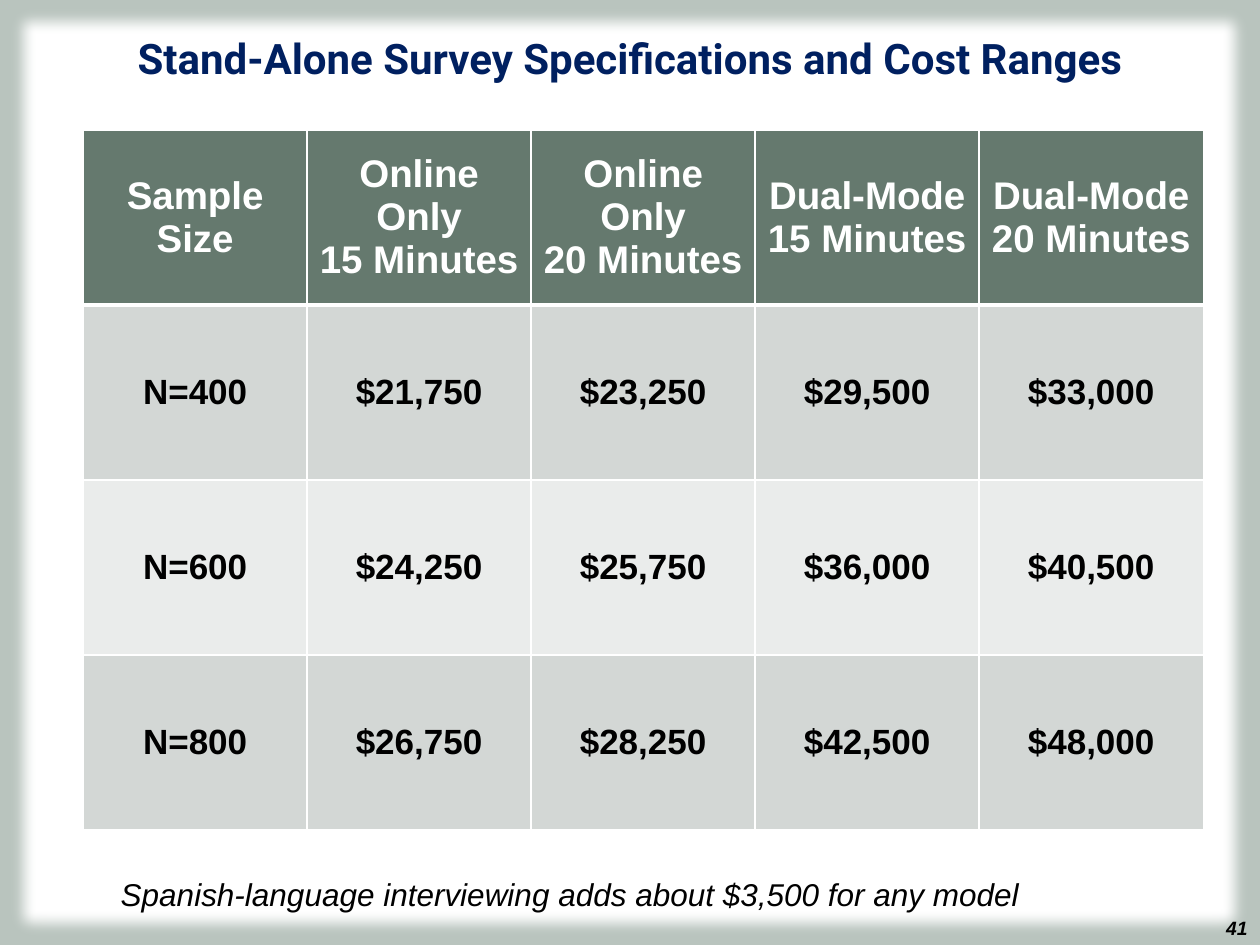
from dataclasses import dataclass

from lxml import etree
from pptx import Presentation
from pptx.dml.color import RGBColor
from pptx.enum.shapes import MSO_SHAPE
from pptx.enum.text import MSO_ANCHOR, PP_ALIGN
from pptx.oxml.ns import qn
from pptx.util import Inches, Pt

RECTANGLE = MSO_SHAPE.RECTANGLE
TOP, MIDDLE, BOTTOM = MSO_ANCHOR.TOP, MSO_ANCHOR.MIDDLE, MSO_ANCHOR.BOTTOM
LEFT, CENTER, RIGHT = PP_ALIGN.LEFT, PP_ALIGN.CENTER, PP_ALIGN.RIGHT


@dataclass(frozen=True)
class Theme:
    background: str = "B9C4BE"
    white: str = "FFFFFF"
    black: str = "000000"
    navy: str = "002060"
    header: str = "65796E"
    bands: tuple = ("D3D7D5", "EAECEB")
    title_font: str = "Roboto"
    body_font: str = "Arial"
    title_size: int = 24
    header_size: int = 22
    cell_size: int = 20
    note_size: int = 18
    number_size: int = 11


class SlideBuilder:
    def __init__(self, slide, theme):
        self.slide = slide
        self.theme = theme

    def background(self):
        fill = self.slide.background.fill
        fill.solid()
        fill.fore_color.rgb = RGBColor.from_string(self.theme.background)

    def soft_panel(self, left, top, width, height, softness):
        shape = self.slide.shapes.add_shape(
            RECTANGLE, Inches(left), Inches(top), Inches(width), Inches(height))
        shape.fill.solid()
        shape.fill.fore_color.rgb = RGBColor.from_string(self.theme.white)
        shape.line.fill.background()
        shape.shadow.inherit = False
        effects = shape._element.spPr.find(qn("a:effectLst"))
        etree.SubElement(effects, qn("a:softEdge"), rad=str(Inches(softness)))

    def style_text(self, text_frame, text, size, color, font_name=None,
                   align=LEFT, bold=False, italic=False):
        text_frame.text = text
        for paragraph in text_frame.paragraphs:
            paragraph.alignment = align
            font = paragraph.font
            font.name = font_name or self.theme.body_font
            font.size = Pt(size)
            font.bold = bold
            font.italic = italic
            font.color.rgb = RGBColor.from_string(color)

    def text(self, left, top, width, height, text, size, color,
             anchor=TOP, **style):
        shape = self.slide.shapes.add_textbox(
            Inches(left), Inches(top), Inches(width), Inches(height))
        shape.text_frame.word_wrap = True
        shape.text_frame.vertical_anchor = anchor
        self.style_text(shape.text_frame, text, size, color, **style)

    def cell_borders(self, cell, bottom_width, top_width):
        properties = cell._tc.get_or_add_tcPr()
        widths = {"a:lnL": 1, "a:lnR": 1, "a:lnT": top_width, "a:lnB": bottom_width}
        for index, (tag, width) in enumerate(widths.items()):
            line = etree.Element(qn(tag), w=str(Pt(width)))
            fill = etree.SubElement(line, qn("a:solidFill"))
            etree.SubElement(fill, qn("a:srgbClr"), val=self.theme.white)
            properties.insert(index, line)

    def table(self, left, top, width, height, rows):
        theme = self.theme
        table = self.slide.shapes.add_table(
            len(rows), len(rows[0]), Inches(left), Inches(top),
            Inches(width), Inches(height)).table
        for row_index, row in enumerate(rows):
            is_header = row_index == 0
            if is_header:
                fill, color, size = theme.header, theme.white, theme.header_size
            else:
                fill = theme.bands[(row_index - 1) % len(theme.bands)]
                color, size = theme.black, theme.cell_size
            for column_index, text in enumerate(row):
                cell = table.cell(row_index, column_index)
                cell.fill.solid()
                cell.fill.fore_color.rgb = RGBColor.from_string(fill)
                cell.vertical_anchor = MIDDLE
                self.style_text(cell.text_frame, text, size, color,
                                align=CENTER, bold=True)
                self.cell_borders(cell, bottom_width=3 if is_header else 1,
                                  top_width=3 if row_index == 1 else 1)


COST_ROWS = [
    ["Sample Size", "Online Only\n15 Minutes", "Online Only\n20 Minutes",
     "Dual-Mode\n15 Minutes", "Dual-Mode\n20 Minutes"],
    ["N=400", "$21,750", "$23,250", "$29,500", "$33,000"],
    ["N=600", "$24,250", "$25,750", "$36,000", "$40,500"],
    ["N=800", "$26,750", "$28,250", "$42,500", "$48,000"],
]


def main():
    presentation = Presentation()
    presentation.slide_width = Inches(10)
    presentation.slide_height = Inches(7.5)
    slide = presentation.slides.add_slide(presentation.slide_layouts[6])
    theme = Theme()
    builder = SlideBuilder(slide, theme)

    # Background, panel and page number
    builder.background()
    builder.soft_panel(0.04, 0.03, 9.92, 7.45, softness=0.12)
    builder.text(8.73, 7.22, 1.27, 0.28, "41", theme.number_size, theme.black,
                 align=RIGHT, bold=True, italic=True)

    # Title
    builder.text(0, 0.21, 10, 0.6,
                 "Stand-Alone Survey Specifications and Cost Ranges",
                 theme.title_size, theme.navy, font_name=theme.title_font,
                 align=CENTER, bold=True)

    # Note under the table
    builder.text(0.86, 6.9, 8.89, 0.39,
                 "Spanish-language interviewing adds about $3,500 for any model",
                 theme.note_size, theme.black, anchor=BOTTOM, italic=True)

    # Cost table
    builder.table(0.66, 1.03, 8.89, 5.56, COST_ROWS)

    presentation.save("out.pptx")


if __name__ == "__main__":
    main()
